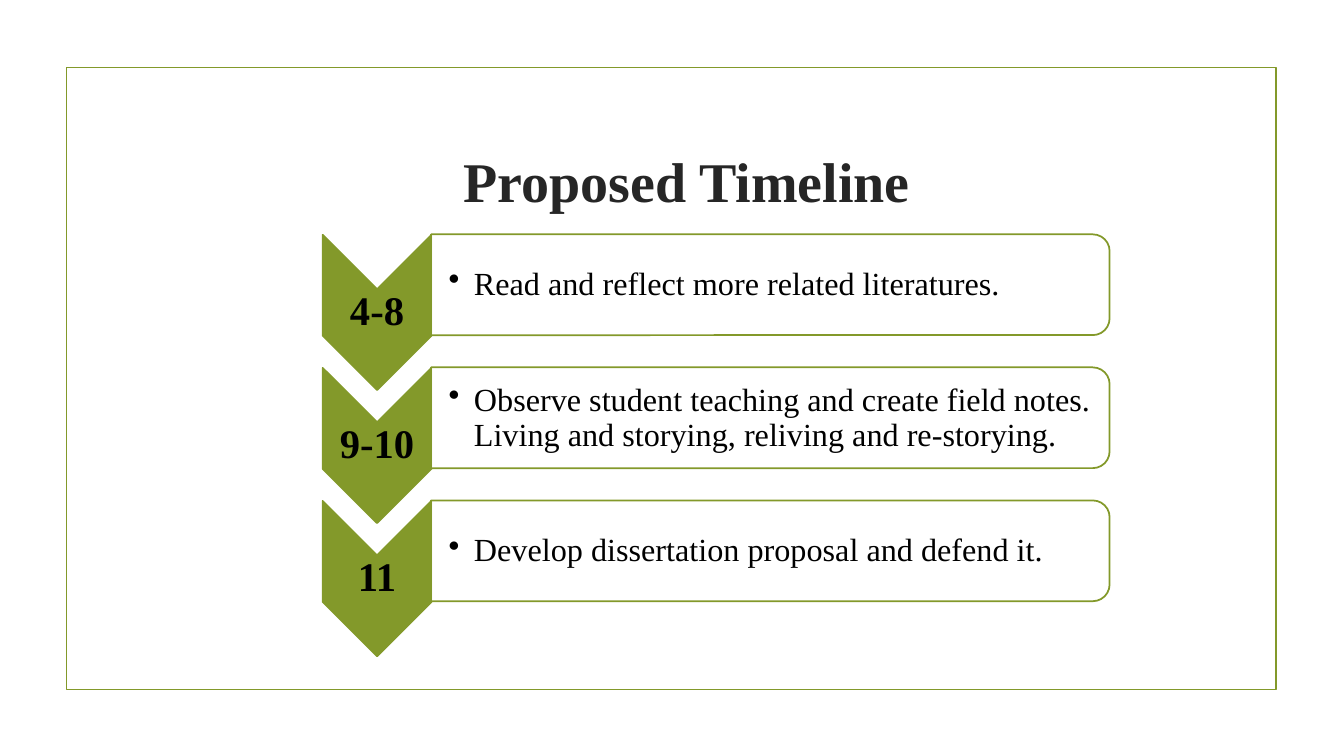
from lxml.etree import SubElement
from pptx import Presentation
from pptx.dml.color import RGBColor
from pptx.enum.shapes import MSO_SHAPE
from pptx.enum.text import MSO_ANCHOR, MSO_AUTO_SIZE, PP_ALIGN
from pptx.oxml.ns import qn
from pptx.util import Inches, Pt

COLORS = {"green": "83992A", "white": "FFFFFF", "title": "262626", "text": "000000"}
STAGES = [
    ("4-8", "Read and reflect more related literatures."),
    ("9-10", "Observe student teaching and create field notes. "
             "Living and storying, reliving and re-storying."),
    ("11", "Develop dissertation proposal and defend it."),
]
PITCH = 1.32


class TimelineSlide:
    """Holds the style and the current slide, with a method per element."""

    def __init__(self, prs, font="Times New Roman"):
        self.s = prs.slides.add_slide(prs.slide_layouts[5])
        self.font = font

    def color(self, name):
        return RGBColor.from_string(COLORS[name])

    def format(self, p, size, color="text", bold=False):
        for r in p.runs:
            r.font.name = self.font
            r.font.size = Pt(size)
            r.font.bold = bold
            r.font.color.rgb = self.color(color)

    def title(self, text, x, y, w, h):
        sp = self.s.shapes.title
        sp.left, sp.top, sp.width, sp.height = map(Inches, (x, y, w, h))
        tf = sp.text_frame
        tf.text = text
        tf.auto_size = MSO_AUTO_SIZE.NONE
        tf.vertical_anchor = MSO_ANCHOR.MIDDLE
        p = tf.paragraphs[0]
        p.alignment = PP_ALIGN.CENTER
        self.format(p, 40, "title", True)

    def shape(self, kind, x, y, w, h, fill=None, alpha=None, rotation=0):
        sp = self.s.shapes.add_shape(kind, *map(Inches, (x, y, w, h)))
        sp.shadow.inherit = False
        sp.rotation = rotation
        sp.line.color.rgb = self.color("green")
        sp.line.width = Pt(1.25)
        if fill:
            sp.fill.solid()
            sp.fill.fore_color.rgb = self.color(fill)
        else:
            sp.fill.background()
        if alpha:
            clr = sp.fill._xPr.find(qn("a:solidFill"))[0]
            SubElement(clr, qn("a:alpha"), val=str(alpha * 1000))

    def text(self, text, x, y, w, h, size, inset=0.02, bold=False, bullet=False):
        tf = self.s.shapes.add_textbox(*map(Inches, (x, y, w, h))).text_frame
        tf.word_wrap = True
        tf.vertical_anchor = MSO_ANCHOR.MIDDLE
        tf.margin_left = Inches(inset)
        tf.margin_top = tf.margin_right = tf.margin_bottom = Inches(0.02)
        tf.text = text
        p = tf.paragraphs[0]
        p.line_spacing = 0.9
        if bullet:
            p.level = 1
            pPr = p._p.get_or_add_pPr()
            pPr.set("marL", str(Inches(0.25)))
            pPr.set("indent", str(-Inches(0.25)))
            SubElement(pPr, qn("a:buChar"), char="•")
        else:
            p.alignment = PP_ALIGN.CENTER
        self.format(p, size, bold=bold)

    def stage(self, label, task, dy):
        self.shape(MSO_SHAPE.CHEVRON, 2.97, 2.56 + dy, 1.54, 1.08, "green", rotation=90)
        self.text(label, 3.2, 2.87 + dy, 1.08, 0.46, 29, bold=True)
        self.shape(MSO_SHAPE.ROUND_2_SAME_RECTANGLE, 7.14, -0.54 + dy, 1, 6.73,
                   "white", alpha=90, rotation=90)
        self.text(task, 4.27, 2.38 + dy, 6.68, 0.9, 23, inset=0.18, bullet=True)


def main():
    prs = Presentation()
    prs.slide_width, prs.slide_height = Inches(13.33), Inches(7.5)
    slide = TimelineSlide(prs)
    slide.shape(MSO_SHAPE.RECTANGLE, 0.66, 0.67, 12, 6.17)
    slide.title("Proposed Timeline", 1.56, 1.07, 10.5, 1.43)
    for i, (label, task) in enumerate(STAGES):
        slide.stage(label, task, i * PITCH)
    prs.save("out.pptx")


if __name__ == "__main__":
    main()
